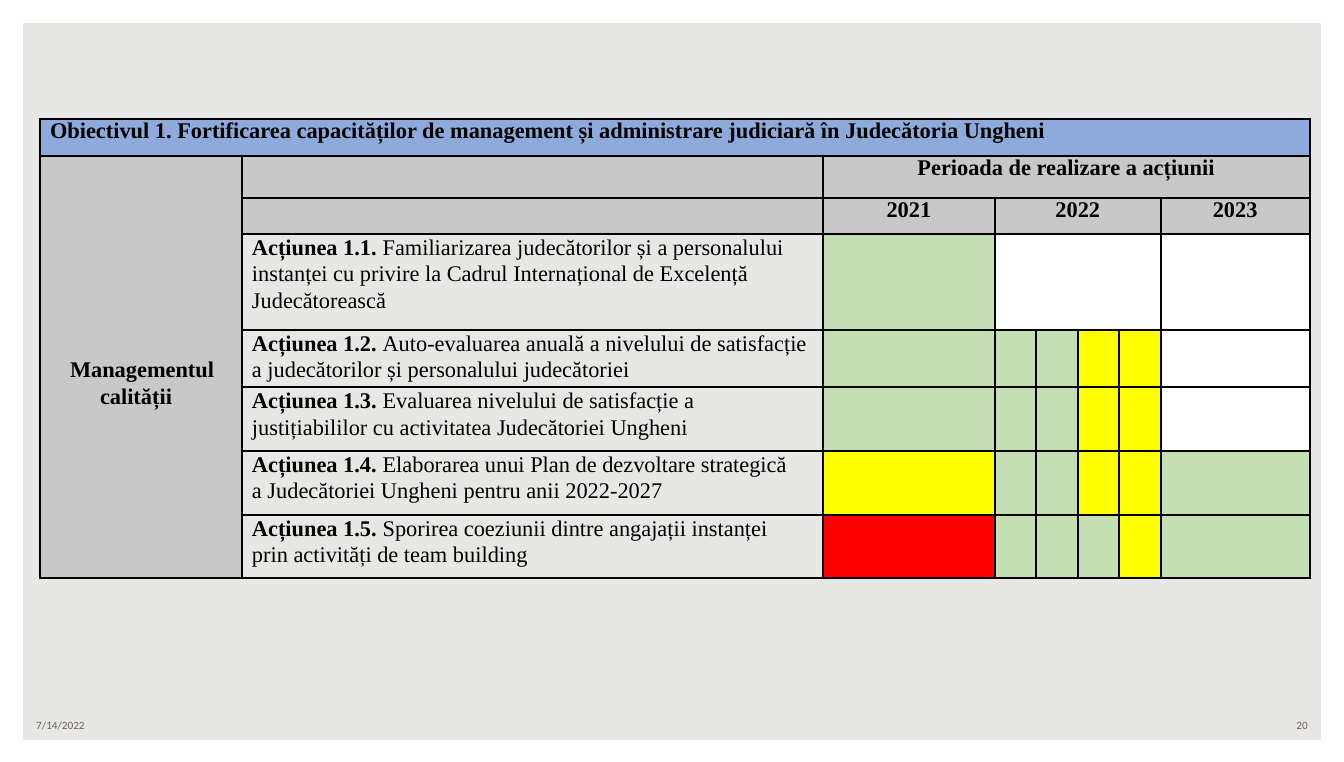
from typing import NamedTuple

from lxml import etree
from pptx import Presentation
from pptx.dml.color import RGBColor
from pptx.enum import shapes, text
from pptx.oxml import ns
from pptx.util import Emu, Pt

PX = 914400 / 134.4
SERIF, SANS = "Times New Roman", "Calibri"
BLACK, WHITE, GREY, FOOTER = "000000", "FFFFFF", "C8C8C8", "6C6463"
BLUE, PAGE = "8EAADB", "E7E7E5"
STATUS = {"G": "C5DFB3", "Y": "FFFF00", "R": "FF0000", "W": WHITE}
COLUMNS = [202, 581, 172, 41, 42, 41, 42, 149]
ROWS = [37, 42, 36, 96, 57, 64, 64, 63]
FIRST_ACTION_ROW = 3
CENTER, RIGHT = text.PP_ALIGN.CENTER, text.PP_ALIGN.RIGHT


class Action(NamedTuple):
    number: str
    description: str
    line_spacing: float
    status: str  # 2021, four quarters of 2022, 2023


class Heading(NamedTuple):
    row: int
    column: int
    label: str


class Span(NamedTuple):
    top: int
    left: int
    bottom: int
    right: int


ACTIONS = [
    Action("1.1", "Familiarizarea judecătorilor și a personalului instanței cu privire "
           "la Cadrul Internațional de Excelență Judecătorească", 1.06, "GWWWWW"),
    Action("1.2", "Auto-evaluarea anuală a nivelului de satisfacție a judecătorilor "
           "și personalului judecătoriei", 1.06, "GGGYYW"),
    Action("1.3", "Evaluarea nivelului de satisfacție a justițiabililor cu activitatea "
           "Judecătoriei Ungheni", 1.07, "GGGYYW"),
    Action("1.4", "Elaborarea unui Plan de dezvoltare strategică\v"
           "a Judecătoriei Ungheni pentru anii 2022-2027", 1.06, "YGGYYG"),
    Action("1.5", "Sporirea coeziunii dintre angajații instanței\v"
           "prin activități de team building", 1.06, "RGGGYG"),
]
HEADINGS = [
    Heading(1, 2, "Perioada de realizare a acțiunii"),
    Heading(2, 2, "2021"), Heading(2, 3, "2022"), Heading(2, 7, "2023"),
]
SPANS = [Span(0, 0, 0, 7), Span(1, 0, 7, 0), Span(1, 2, 1, 7),
         Span(2, 3, 2, 6), Span(3, 3, 3, 6)]


def px(length: int) -> Emu:
    return Emu(round(length * PX))


def color(value: str) -> RGBColor:
    return RGBColor.from_string(value)


def write(paragraph, words: str, *, size=12, font=SERIF, ink=BLACK, bold=False,
          align=None, spacing=None) -> None:
    """Add words to a paragraph; a \\v in them becomes a line break."""
    for index, line in enumerate(words.split("\v")):
        if index:
            paragraph.add_line_break()
        run = paragraph.add_run()
        run.text = line
        run.font.size, run.font.name, run.font.bold = Pt(size), font, bold
        run.font.color.rgb = color(ink)
    if align is not None:
        paragraph.alignment = align
    if spacing:
        paragraph.line_spacing = spacing


def indent(paragraph, left: int, first: int = 0) -> None:
    properties = paragraph._p.get_or_add_pPr()
    properties.set("marL", str(px(left)))
    properties.set("indent", str(px(first)))


def add_footer(slide, left: int, words: str, align=None) -> None:
    box = slide.shapes.add_textbox(px(left), px(712), px(313), px(27))
    box.text_frame.word_wrap = True
    box.text_frame.vertical_anchor = text.MSO_ANCHOR.MIDDLE
    write(box.text_frame.paragraphs[0], words, size=6, font=SANS, ink=FOOTER, align=align)


def style_cell(cell, fill: str | None) -> None:
    cell.margin_left = cell.margin_right = cell.margin_top = cell.margin_bottom = 0
    if fill:
        cell.fill.solid()
        cell.fill.fore_color.rgb = color(fill)
    else:
        cell.fill.background()
    properties = cell._tc.get_or_add_tcPr()
    for index, side in enumerate(("lnL", "lnR", "lnT", "lnB")):
        line = etree.Element(ns.qn(f"a:{side}"), w=str(Pt(1)))
        solid = etree.SubElement(line, ns.qn("a:solidFill"))
        etree.SubElement(solid, ns.qn("a:srgbClr"), val=BLACK)
        properties.insert(index, line)
    # Keep blank cells from stretching their row
    paragraph = cell.text_frame.paragraphs[0]._p
    etree.SubElement(paragraph, ns.qn("a:endParaRPr"), sz="1200")


def cell_fill(row: int, column: int) -> str | None:
    if row == 0:
        return BLUE
    if column == 0 or row < FIRST_ACTION_ROW:
        return GREY
    if column == 1:
        return None
    return STATUS[ACTIONS[row - FIRST_ACTION_ROW].status[column - 2]]


def add_plan(slide) -> None:
    frame = slide.shapes.add_table(len(ROWS), len(COLUMNS), px(40), px(119),
                                   px(sum(COLUMNS)), px(sum(ROWS)))
    table = frame.table
    table.first_row = table.horz_banding = False
    for column, width in zip(table.columns, COLUMNS):
        column.width = px(width)
    for row, height in zip(table.rows, ROWS):
        row.height = px(height)
    for row in range(len(ROWS)):
        for column in range(len(COLUMNS)):
            style_cell(table.cell(row, column), cell_fill(row, column))
    for span in SPANS:
        table.cell(span.top, span.left).merge(table.cell(span.bottom, span.right))

    # Objective and column headings
    objective = table.cell(0, 0).text_frame.paragraphs[0]
    write(objective, "Obiectivul 1. Fortificarea capacităților de management și "
          "administrare judiciară în Judecătoria Ungheni", bold=True)
    indent(objective, 10)
    for heading in HEADINGS:
        cell = table.cell(heading.row, heading.column)
        write(cell.text_frame.paragraphs[0], heading.label, bold=True, align=CENTER)

    # Area name, slightly below the middle of its cell
    area = table.cell(1, 0)
    area.vertical_anchor = text.MSO_ANCHOR.MIDDLE
    area.margin_top = px(32)
    paragraph = area.text_frame.paragraphs[0]
    write(paragraph, "Managementul calității", bold=True, spacing=1.08)
    indent(paragraph, 60, -30)

    # Actions
    for row, action in enumerate(ACTIONS, FIRST_ACTION_ROW):
        cell = table.cell(row, 1)
        cell.margin_right = px(10)
        paragraph = cell.text_frame.paragraphs[0]
        write(paragraph, f"Acțiunea {action.number}. ", bold=True)
        write(paragraph, action.description, spacing=action.line_spacing)
        indent(paragraph, 10)


def main() -> None:
    presentation = Presentation()
    presentation.slide_width, presentation.slide_height = px(1344), px(762)
    slide = presentation.slides.add_slide(presentation.slide_layouts[6])

    # Page and white frame
    slide.background.fill.solid()
    slide.background.fill.fore_color.rgb = color(PAGE)
    border = slide.shapes.add_shape(shapes.MSO_SHAPE.FRAME, 0, 0, px(1344), px(763))
    border.adjustments[0] = 0.03
    border.shadow.inherit = False
    border.fill.solid()
    border.fill.fore_color.rgb = color(WHITE)
    border.line.fill.background()

    # Date and page number
    add_footer(slide, 23, "7/14/2022")
    add_footer(slide, 1008, "20", RIGHT)

    add_plan(slide)
    presentation.save("out.pptx")


if __name__ == "__main__":
    main()
